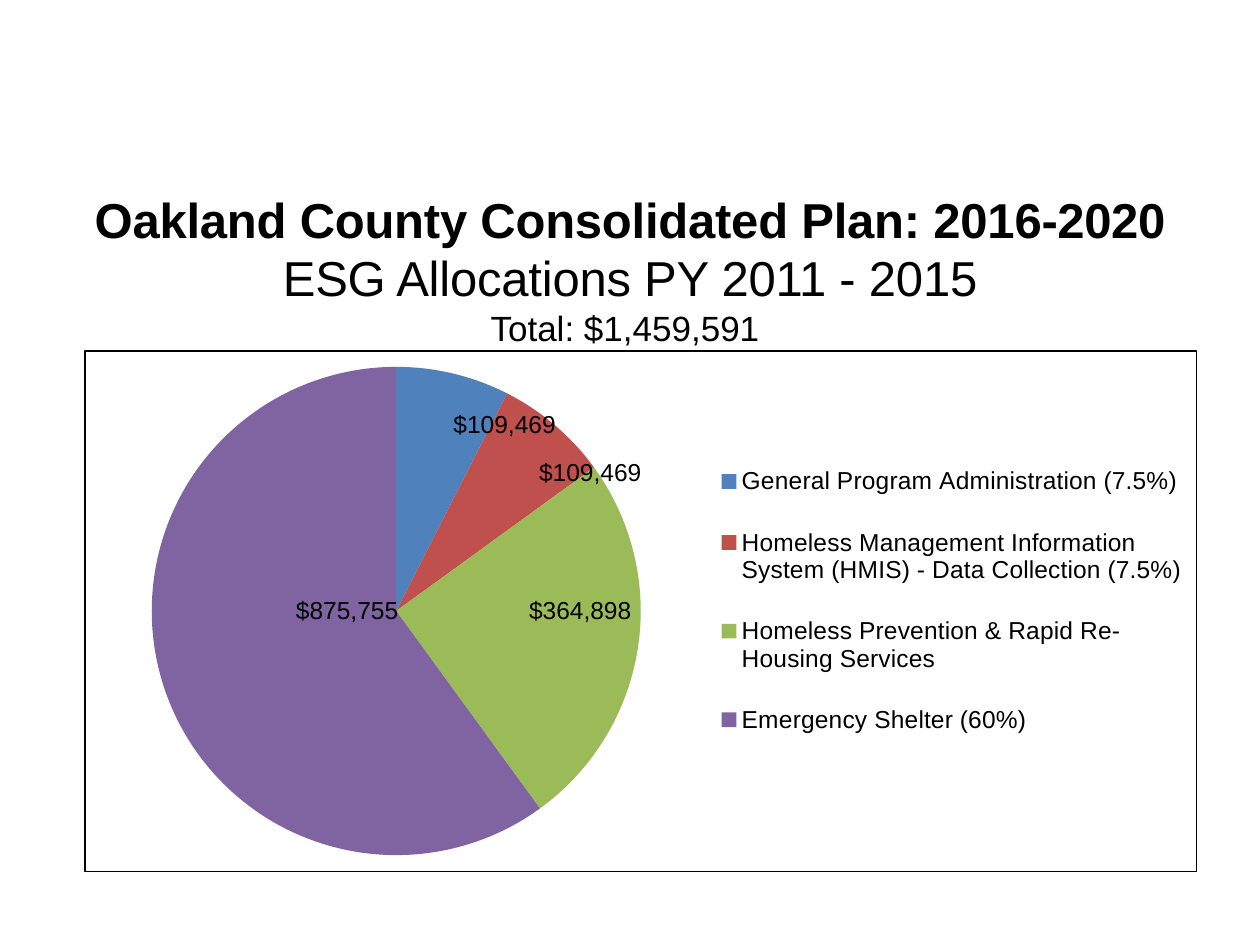
from lxml import etree
from pptx import Presentation
from pptx import util as u
from pptx.chart.data import CategoryChartData
from pptx.dml.color import RGBColor
from pptx.enum import chart as charts, text
from pptx.oxml import parse_xml
from pptx.oxml.ns import nsdecls, qn

COLOURS = {"ink": "000000", "admin": "4F81BD", "data": "C0504D",
           "prevention": "9BBB59", "shelter": "8064A2"}
FONT = "Arial"
ALLOCATIONS = [
    ("General Program Administration (7.5%)", 7.5, "admin"),
    ("Homeless Management Information System (HMIS) - Data Collection (7.5%)", 7.5, "data"),
    ("Homeless Prevention & Rapid Re-Housing Services", 25, "prevention"),
    ("Emergency Shelter (60%)", 60, "shelter"),
]
TITLE_LINES = [
    [("Oakland County Consolidated Plan: 201", 28, True, -10), ("6-2020", 28, True, -20)],
    [("ESG Allocations PY 2011 - 2015", 28, False, -10)],
    [("Total: $1,459,591 ", 20, False, 0)],
]
AMOUNTS = [("$109,469", 3.5, 3.2), ("$109,469", 4.18, 3.58),
           ("$364,898", 4.1, 4.67), ("$875,755", 2.25, 4.67)]


def colour(name):
    """Return the named colour."""
    return RGBColor.from_string(COLOURS[name])


def style(font, size, bold=False):
    """Format a font in the slide's typeface and ink."""
    font.name = FONT
    font.size = u.Pt(size)
    font.bold = bold
    font.color.rgb = colour("ink")


def add_title(page, left, top, width, height):
    """Fill and place the three-line title."""
    box = page.shapes.title
    box.left, box.top, box.width, box.height = map(u.Inches, (left, top, width, height))
    frame = box.text_frame
    frame.margin_left = frame.margin_right = frame.margin_top = frame.margin_bottom = 0
    frame.vertical_anchor = text.MSO_ANCHOR.TOP
    frame.auto_size = text.MSO_AUTO_SIZE.NONE
    frame.word_wrap = True
    for index, runs in enumerate(TITLE_LINES):
        para = frame.add_paragraph() if index else frame.paragraphs[0]
        para.alignment = text.PP_ALIGN.CENTER
        for words, size, bold, spacing in runs:
            span = para.add_run()
            span.text = words
            style(span.font, size, bold)
            span.font._element.set("spc", str(spacing))


def set_layout(parent, position, left, top, width, height, inner=False):
    """Fix a chart part at fractions of the chart's box."""
    for old in parent.findall(qn("c:layout")):
        parent.remove(old)
    layout = etree.Element(qn("c:layout"))
    manual = etree.SubElement(layout, qn("c:manualLayout"))
    settings = [("layoutTarget", "inner")] if inner else []
    settings += [("xMode", "edge"), ("yMode", "edge"), ("x", left),
                 ("y", top), ("w", width), ("h", height)]
    for tag, value in settings:
        etree.SubElement(manual, qn(f"c:{tag}")).set("val", str(value))
    parent.insert(position, layout)


def add_pie(page, left, top, width, height):
    """Add the bordered pie chart of allocations and its legend."""
    data = CategoryChartData()
    data.categories = [name for name, _, _ in ALLOCATIONS]
    data.add_series("Series 1", [share for _, share, _ in ALLOCATIONS])
    pie = page.shapes.add_chart(charts.XL_CHART_TYPE.PIE,
                                *map(u.Inches, (left, top, width, height)), data).chart
    pie.has_title = False
    pie.font.name = "Calibri"
    pie.font.size = u.Pt(10)
    pie.font.color.rgb = colour("ink")
    plot = pie.plots[0]
    plot.vary_by_categories = True
    for index, (_, _, name) in enumerate(ALLOCATIONS):
        fill = plot.series[0].points[index].format.fill
        fill.solid()
        fill.fore_color.rgb = colour(name)
    pie.has_legend = True
    legend = pie.legend
    legend.position = charts.XL_LEGEND_POSITION.RIGHT
    legend.include_in_layout = False
    style(legend.font, 14)
    set_layout(legend._element, 1, 0.57, 0.16, 0.42, 0.64)
    area = pie._chartSpace.chart.plotArea
    set_layout(area, 0, 0.06, 0.03, 0.44, 0.94, inner=True)
    border = parse_xml(
        f'<c:spPr {nsdecls("c", "a")}><a:noFill/><a:ln w="{u.Pt(0.75)}"><a:solidFill>'
        f'<a:srgbClr val="{COLOURS["ink"]}"/></a:solidFill></a:ln></c:spPr>')
    pie._chartSpace.chart.addnext(border)


def add_amount(page, words, left, top, width=1.02, height=0.34):
    """Add one dollar amount over the pie."""
    box = page.shapes.add_textbox(*map(u.Inches, (left, top, width, height)))
    frame = box.text_frame
    frame.word_wrap = False
    frame.auto_size = text.MSO_AUTO_SIZE.SHAPE_TO_FIT_TEXT
    span = frame.paragraphs[0].add_run()
    span.text = words
    style(span.font, 14)


def main():
    """Build and save the slide."""
    deck = Presentation()
    deck.slide_width, deck.slide_height = u.Inches(10), u.Inches(7.5)
    page = deck.slides.add_slide(deck.slide_layouts.get_by_name("Title Only"))
    add_title(page, 0, 1.5, 10, 1.28)
    add_pie(page, 0.67, 2.78, 8.83, 4.14)
    for words, left, top in AMOUNTS:
        add_amount(page, words, left, top)
    deck.save("out.pptx")


if __name__ == "__main__":
    main()
